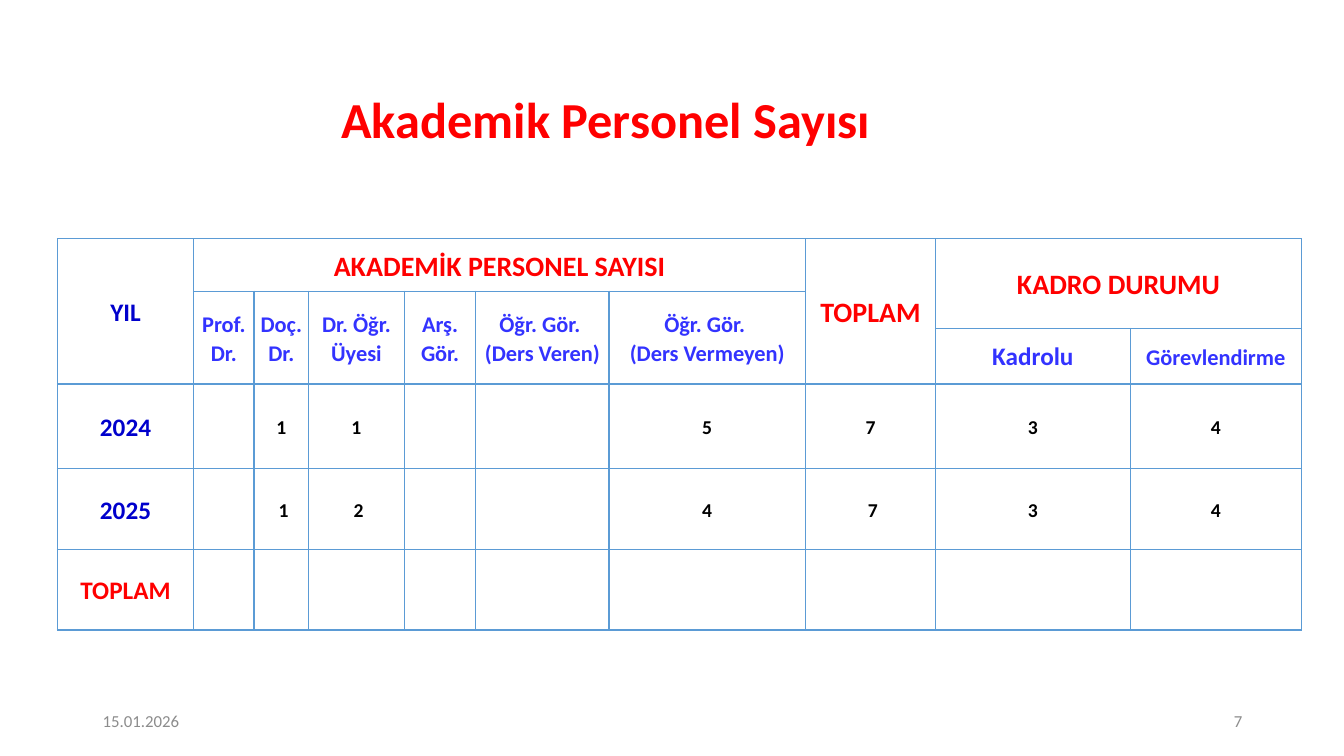
"""Build the slide with the table of academic staff numbers."""
from lxml.etree import SubElement
from pptx import Presentation
from pptx.dml.color import RGBColor
from pptx.enum.text import MSO_ANCHOR, PP_ALIGN
from pptx.oxml import parse_xml
from pptx.oxml.ns import nsdecls, qn
from pptx.util import Inches, Pt

RED, NAVY, BLUE, BLACK, GREY, EDGE = (
    "FF0000", "0000CC", "3333FF", "000000", "8C8C8C", "5B9BD5")

LABELS = [
    ("Akademik Personel Sayısı", (0.37, 0.83, 11.28, 0.76), 36, RED, True, PP_ALIGN.CENTER, 0.9),
    ("15.01.2026", (0.92, 6.95, 3, 0.4), 12, GREY, False, PP_ALIGN.LEFT, 1),
    ("7", (9.42, 6.95, 3, 0.4), 12, GREY, False, PP_ALIGN.RIGHT, 1),
]
COLS = [1.35, 0.6, 0.54, 0.95, 0.71, 1.32, 1.95, 1.29, 1.93, 1.7]
ROWS = [0.52, 0.37, 0.55, 0.84, 0.8, 0.8]
HEADS = [
    (0, 0, 3, 1, "YIL", 18, NAVY),
    (0, 1, 1, 6, "AKADEMİK PERSONEL SAYISI", 20, RED),
    (0, 7, 3, 1, "TOPLAM", 20, RED),
    (0, 8, 2, 2, "KADRO DURUMU", 20, RED),
    (2, 8, 1, 1, "Kadrolu", 18, BLUE),
    (2, 9, 1, 1, "Görevlendirme", 16, BLUE),
]
RANKS = ["Prof. Dr.", "Doç. Dr.", "Dr. Öğr. Üyesi", "Arş. Gör.",
         "Öğr. Gör. \n(Ders Veren)", "Öğr. Gör. \n(Ders Vermeyen)"]
YEARS = [
    ("2024", NAVY, ["", "1", "1", "", "", "5", "7", "3", "4"]),
    ("2025", NAVY, ["", " 1", " 2", "", "", "4", " 7", "3", "4"]),
    ("TOPLAM", RED, [""] * 9),
]


def tint(code):
    return RGBColor.from_string(code)


def write(frame, text, size, color, bold=True, align=PP_ALIGN.CENTER, gap=1.07):
    frame.text = text
    for para in frame.paragraphs:
        para.alignment = align
        para.line_spacing = gap
        for run in para.runs:
            run.font.name = "Calibri"
            run.font.size = Pt(size)
            run.font.bold = bold
            run.font.color.rgb = tint(color)


def frame_cell(cell):
    cell.fill.background()
    cell.vertical_anchor = MSO_ANCHOR.MIDDLE
    cell.margin_left = cell.margin_right = cell.margin_top = Inches(0.01)
    cell.margin_bottom = 0
    props = cell._tc.get_or_add_tcPr()
    for spot, side in enumerate("LRTB"):
        line = parse_xml(f'<a:ln{side} {nsdecls("a")} w="{Pt(1)}"/>')
        fill = SubElement(line, qn("a:solidFill"))
        SubElement(fill, qn("a:srgbClr"), val=EDGE)
        props.insert(spot, line)


def add_labels(slide):
    for text, box, size, color, bold, align, gap in LABELS:
        frame = slide.shapes.add_textbox(*map(Inches, box)).text_frame
        frame.word_wrap = True
        frame.vertical_anchor = MSO_ANCHOR.MIDDLE
        write(frame, text, size, color, bold, align, gap)


def add_staff(slide):
    box = map(Inches, (0.57, 2.37, sum(COLS), sum(ROWS)))
    table = slide.shapes.add_table(len(ROWS), len(COLS), *box).table
    table.first_row = table.horz_banding = False
    for col, width in zip(table.columns, COLS):
        col.width = Inches(width)
    for row, height in zip(table.rows, ROWS):
        row.height = Inches(height)
    for cell in table.iter_cells():
        frame_cell(cell)

    ranks = [(1, col, 2, 1, text, 16, BLUE) for col, text in enumerate(RANKS, 1)]
    for row, col, down, wide, text, size, color in HEADS + ranks:
        cell = table.cell(row, col)
        if down * wide > 1:
            cell.merge(table.cell(row + down - 1, col + wide - 1))
        write(cell.text_frame, text, size, color, gap=1 if text == "Kadrolu" else 1.07)

    for row, (year, color, counts) in enumerate(YEARS, 3):
        write(table.cell(row, 0).text_frame, year, 18, color)
        for col, count in enumerate(counts, 1):
            if count:
                write(table.cell(row, col).text_frame, count, 14, BLACK)


def main():
    deck = Presentation()
    deck.slide_width, deck.slide_height = Inches(13.33), Inches(7.5)
    slide = deck.slides.add_slide(deck.slide_layouts[6])
    add_labels(slide)
    add_staff(slide)
    deck.save("out.pptx")


if __name__ == "__main__":
    main()
